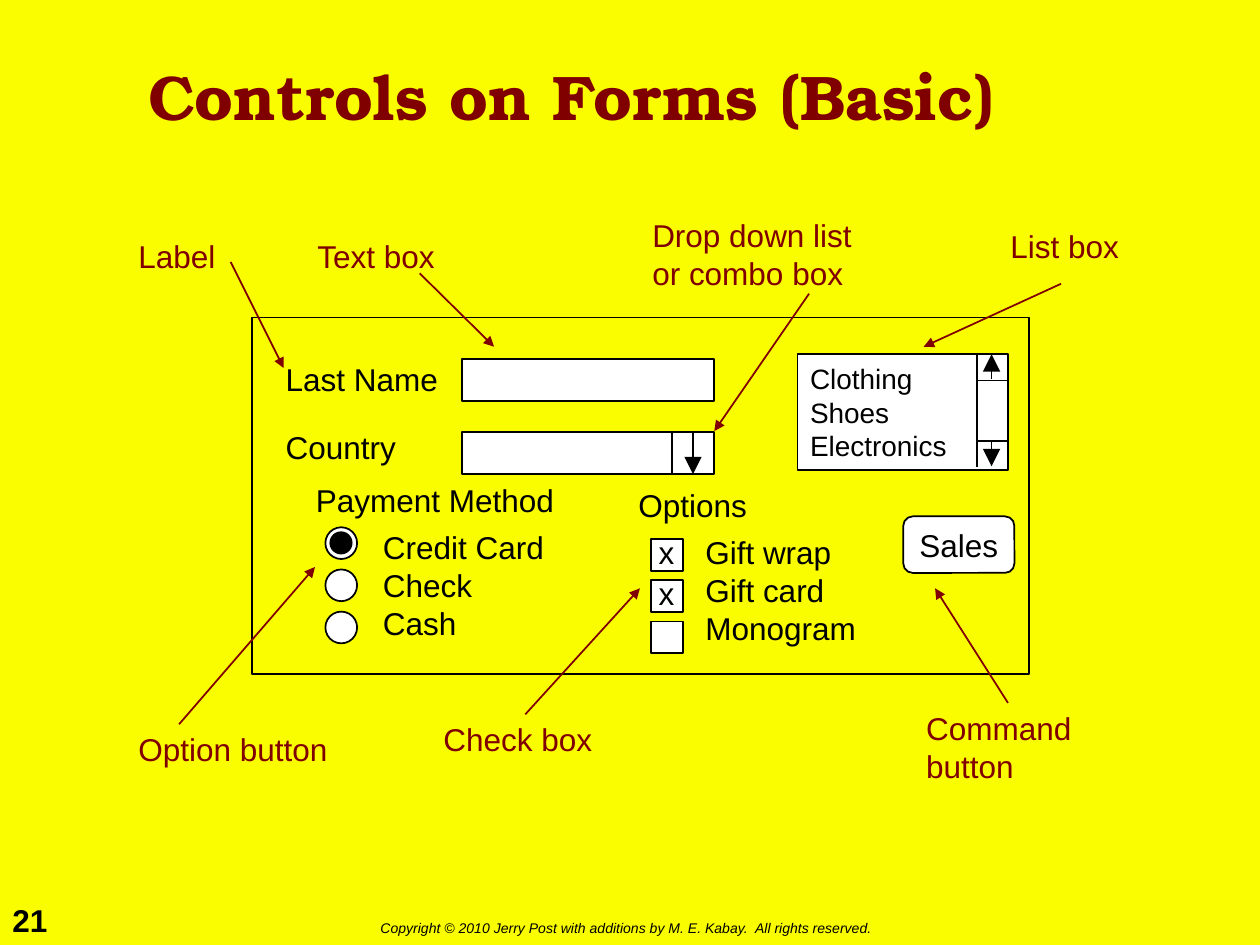
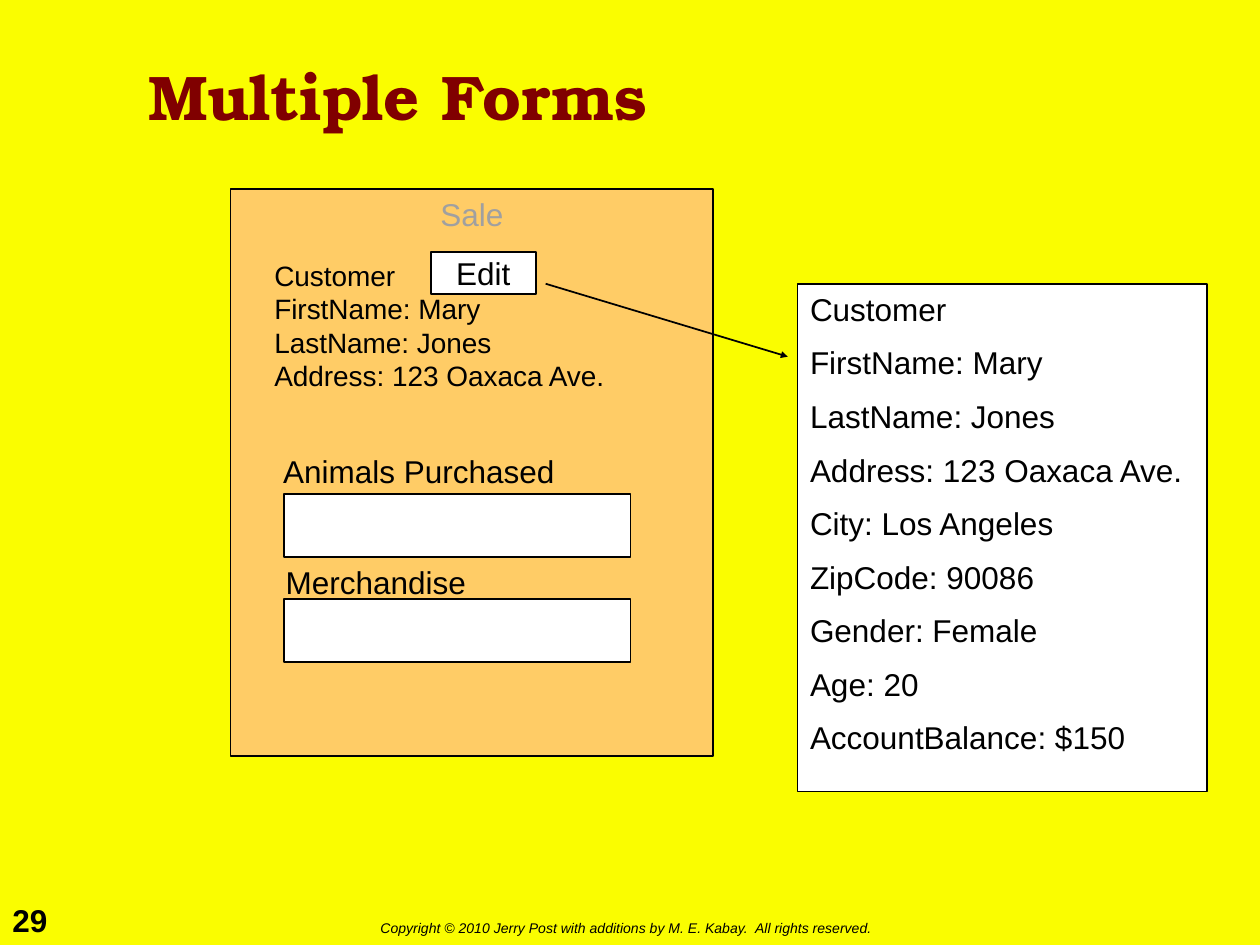
"""Builds two slides on form controls and linked forms."""
from dataclasses import dataclass
from typing import Optional, Union

from lxml.etree import SubElement
from pptx import Presentation
from pptx.dml.color import RGBColor
from pptx.enum.shapes import MSO_CONNECTOR, MSO_SHAPE as Shape
from pptx.enum.text import MSO_ANCHOR as Anchor, MSO_AUTO_SIZE as AutoSize, PP_ALIGN as Align
from pptx.oxml.ns import qn
from pptx.util import Cm, Pt


@dataclass(frozen=True)
class Theme:
    """Colours, fonts and type sizes of the deck."""
    page: str = "FAFD00"
    accent: str = "800000"
    ink: str = "000000"
    paper: str = "FFFFFF"
    form: str = "FFCC66"
    muted: str = "A0A0A0"
    title_font: str = "TeX Gyre Bonum"
    body_font: str = "Arial"
    title: int = 36
    body: int = 18
    small: int = 16
    footer: int = 8
    line: int = 1


T = Theme()


@dataclass(frozen=True)
class TextStyle:
    """Look of every paragraph in one box."""
    size: int = T.body
    color: str = T.ink
    font: str = T.body_font
    bold: bool = False
    italic: bool = False
    align: Align = Align.LEFT
    anchor: Anchor = Anchor.TOP
    wrap: bool = False
    line_spacing: Optional[float] = None
    gap: int = 0


BODY = TextStyle()
CENTERED = TextStyle(align=Align.CENTER, anchor=Anchor.MIDDLE)
CALLOUT = TextStyle(color=T.accent)
WRAPPED_CALLOUT = TextStyle(color=T.accent, wrap=True)
TITLE = TextStyle(T.title, T.accent, T.title_font, bold=True,
                  anchor=Anchor.MIDDLE, wrap=True, line_spacing=0.9)


@dataclass(frozen=True)
class Label:
    """Text without a frame, measured in centimetres."""
    text: str
    x: float
    y: float
    w: float
    h: float = 1.02
    style: TextStyle = BODY
    grow: bool = True


@dataclass(frozen=True)
class Box:
    """Outlined preset shape, measured in centimetres."""
    x: float
    y: float
    w: float
    h: float
    fill: Optional[str] = T.paper
    kind: Shape = Shape.RECTANGLE
    text: str = ""
    style: TextStyle = CENTERED


@dataclass(frozen=True)
class Line:
    """Straight line with an optional arrowhead of a given size."""
    x1: float
    y1: float
    x2: float
    y2: float
    head: str = ""
    color: str = T.ink


Item = Union[Label, Box, Line]


def write(tf, text: str, style: TextStyle) -> None:
    """Fill a text frame with one paragraph per line of text."""
    tf.word_wrap = style.wrap
    tf.vertical_anchor = style.anchor
    for i, words in enumerate(text.split("\n")):
        p = tf.add_paragraph() if i else tf.paragraphs[0]
        p.alignment = style.align
        if style.line_spacing:
            p.line_spacing = style.line_spacing
        if i and style.gap:
            p.space_before = Pt(style.gap)
        r = p.add_run()
        r.text = words
        r.font.name = style.font
        r.font.size = Pt(style.size)
        r.font.bold = style.bold
        r.font.italic = style.italic
        r.font.color.rgb = RGBColor.from_string(style.color)


def draw_label(s, label: Label) -> None:
    """Draw a text box."""
    sp = s.shapes.add_textbox(Cm(label.x), Cm(label.y), Cm(label.w), Cm(label.h))
    write(sp.text_frame, label.text, label.style)
    if label.grow:
        sp.text_frame.auto_size = AutoSize.SHAPE_TO_FIT_TEXT


def draw_box(s, box: Box) -> None:
    """Draw an outlined shape with its text."""
    sp = s.shapes.add_shape(box.kind, Cm(box.x), Cm(box.y), Cm(box.w), Cm(box.h))
    sp.shadow.inherit = False
    if box.fill:
        sp.fill.solid()
        sp.fill.fore_color.rgb = RGBColor.from_string(box.fill)
    else:
        sp.fill.background()
    sp.line.color.rgb = RGBColor.from_string(T.ink)
    sp.line.width = Pt(T.line)
    if box.text:
        write(sp.text_frame, box.text, box.style)


def draw_line(s, line: Line) -> None:
    """Draw a connector, with a triangle at its end if asked for."""
    sp = s.shapes.add_connector(MSO_CONNECTOR.STRAIGHT, Cm(line.x1), Cm(line.y1),
                                Cm(line.x2), Cm(line.y2))
    sp.line.color.rgb = RGBColor.from_string(line.color)
    sp.line.width = Pt(T.line)
    if line.head:
        SubElement(sp.line._get_or_add_ln(), qn("a:tailEnd"),
                   type="triangle", w=line.head, len=line.head)
    SubElement(sp._element.spPr, qn("a:effectLst"))


DRAW = {Label: draw_label, Box: draw_box, Line: draw_line}


def add_slide(prs, number: int, title: str, items: list[Item]) -> None:
    """Add a slide with the shared background, footer and title."""
    s = prs.slides.add_slide(prs.slide_layouts[6])
    s.background.fill.solid()
    s.background.fill.fore_color.rgb = RGBColor.from_string(T.page)
    frame = [
        Label(str(number), 0, 18.03, 1.3, style=TextStyle(bold=True)),
        Label("Copyright © 2010 Jerry Post with additions by M. E. Kabay.  All rights reserved.",
              7.42, 18.42, 10.72, 0.61, TextStyle(T.footer, italic=True)),
        Label(title, 2.74, 0.43, 19.89, 3.18, TITLE, grow=False),
    ]
    for item in frame + items:
        DRAW[type(item)](s, item)


def entry_form() -> list[Item]:
    """Return the name, country and list controls inside the form."""
    field_x, field_w, field_h = 9.32, 5.08, 0.85
    country_y = 8.71
    bar_x, bar_right, bar_mid = 19.69, 20.32, 19.99
    return [
        Box(5.08, 6.4, 15.67, 7.19, fill=None),
        Label("Last Name", 5.51, 7.14, 3.58),
        Box(field_x, 7.24, field_w, field_h),
        Label("Country", 5.51, 8.51, 2.74),
        Box(field_x, country_y, field_w, field_h),
        Line(13.54, country_y, 13.54, country_y + field_h),
        Line(13.97, country_y, 13.97, country_y + field_h, "lg"),
        Box(16.08, 7.14, 4.24, 2.34, text="Clothing\nShoes\nElectronics",
            style=TextStyle(T.small, anchor=Anchor.MIDDLE, wrap=True)),
        Line(bar_x, 7.11, bar_x, 9.42),
        Line(bar_x, 7.67, bar_right, 7.67),
        Line(bar_x, 8.89, bar_right, 8.89),
        Line(bar_mid, 8.89, bar_mid, 9.4, "lg"),
        Line(bar_mid, 7.65, bar_mid, 7.14, "lg"),
        Box(18.21, 10.41, 2.24, 1.14, kind=Shape.ROUNDED_RECTANGLE, text="Sales"),
    ]


def choices() -> list[Item]:
    """Return the option buttons and check boxes with their labels."""
    size = 0.64
    radio_x, radio_y, radio_step = 6.56, 10.63, 0.85
    check_x, check_y, check_step = 13.13, 10.87, 0.83
    checks = [check_y + i * check_step for i in range(3)]
    return [
        Label("Payment Method", 6.12, 9.58, 5.31),
        *(Box(radio_x, radio_y + i * radio_step, size, size, kind=Shape.OVAL) for i in range(3)),
        Box(radio_x + 0.1, radio_y + 0.1, 0.43, 0.43, T.ink, Shape.OVAL),
        Label("Credit Card\nCheck\nCash", 7.47, 10.52, 3.76, 2.54),
        Label("Options", 12.62, 9.68, 2.69),
        *(Box(check_x, y, size, size) for y in checks),
        *(Label("x", check_x - 0.1, y - 0.25, 0.84) for y in checks[:2]),
        Label("Gift wrap\nGift card\nMonogram", 13.97, 10.62, 3.81, 2.54, TextStyle(wrap=True)),
    ]


def callouts() -> list[Item]:
    """Return the names of the controls and the arrows to them."""
    names = [
        Label("Label", 2.54, 4.65, 2.06, style=CALLOUT),
        Label("Text box", 6.15, 4.65, 2.95, style=CALLOUT),
        Label("Drop down list or combo box", 12.9, 4.24, 5.08, 1.78, WRAPPED_CALLOUT),
        Label("List box", 20.12, 4.45, 2.69, style=CALLOUT),
        Label("Option button", 2.54, 14.6, 4.32, style=CALLOUT),
        Label("Check box", 8.69, 14.4, 3.51, style=CALLOUT),
        Label("Command button", 18.42, 14.17, 3.61, 1.78, WRAPPED_CALLOUT),
    ]
    arrows = [
        (4.65, 5.28, 5.72, 7.42),
        (8.46, 5.51, 9.96, 6.99),
        (16.31, 5.92, 14.4, 8.69),
        (21.39, 5.72, 18.62, 6.99),
        (3.61, 14.6, 6.35, 11.43),
        (10.59, 14.4, 12.9, 11.86),
        (20.32, 14.17, 18.85, 11.86),
    ]
    return names + [Line(*ends, "med", T.accent) for ends in arrows]


def linked_forms() -> list[Item]:
    """Return the sale form and the customer form it opens."""
    summary = "Customer\nFirstName: Mary\nLastName: Jones\nAddress: 123 Oaxaca Ave."
    details = "\nCity: Los Angeles\nZipCode: 90086\nGender: Female\nAge: 20\nAccountBalance: $150"
    return [
        Box(4.65, 3.81, 9.73, 11.43, T.form, text="Sale",
            style=TextStyle(color=T.muted, align=Align.CENTER)),
        Label(summary, 5.28, 5.08, 8.69, 2.97, TextStyle(T.small, wrap=True)),
        Label("Animals Purchased", 5.46, 8.99, 5.97),
        Label("Merchandise", 5.51, 11.23, 4.14),
        *(Box(5.72, y, 6.99, 1.27) for y in (9.96, 12.07)),
        Box(8.69, 5.08, 2.11, 0.85, text="Edit"),
        Box(16.08, 5.72, 8.26, 10.24, text=summary + details,
            style=TextStyle(wrap=True, gap=9)),
        Line(11, 5.72, 15.88, 7.19, "sm"),
    ]


def main() -> None:
    """Build and save the deck."""
    prs = Presentation()
    prs.slide_width, prs.slide_height = Cm(25.4), Cm(19.05)
    add_slide(prs, 21, "Controls on Forms (Basic)", entry_form() + choices() + callouts())
    add_slide(prs, 29, "Multiple Forms", linked_forms())
    prs.save("out.pptx")


if __name__ == "__main__":
    main()
